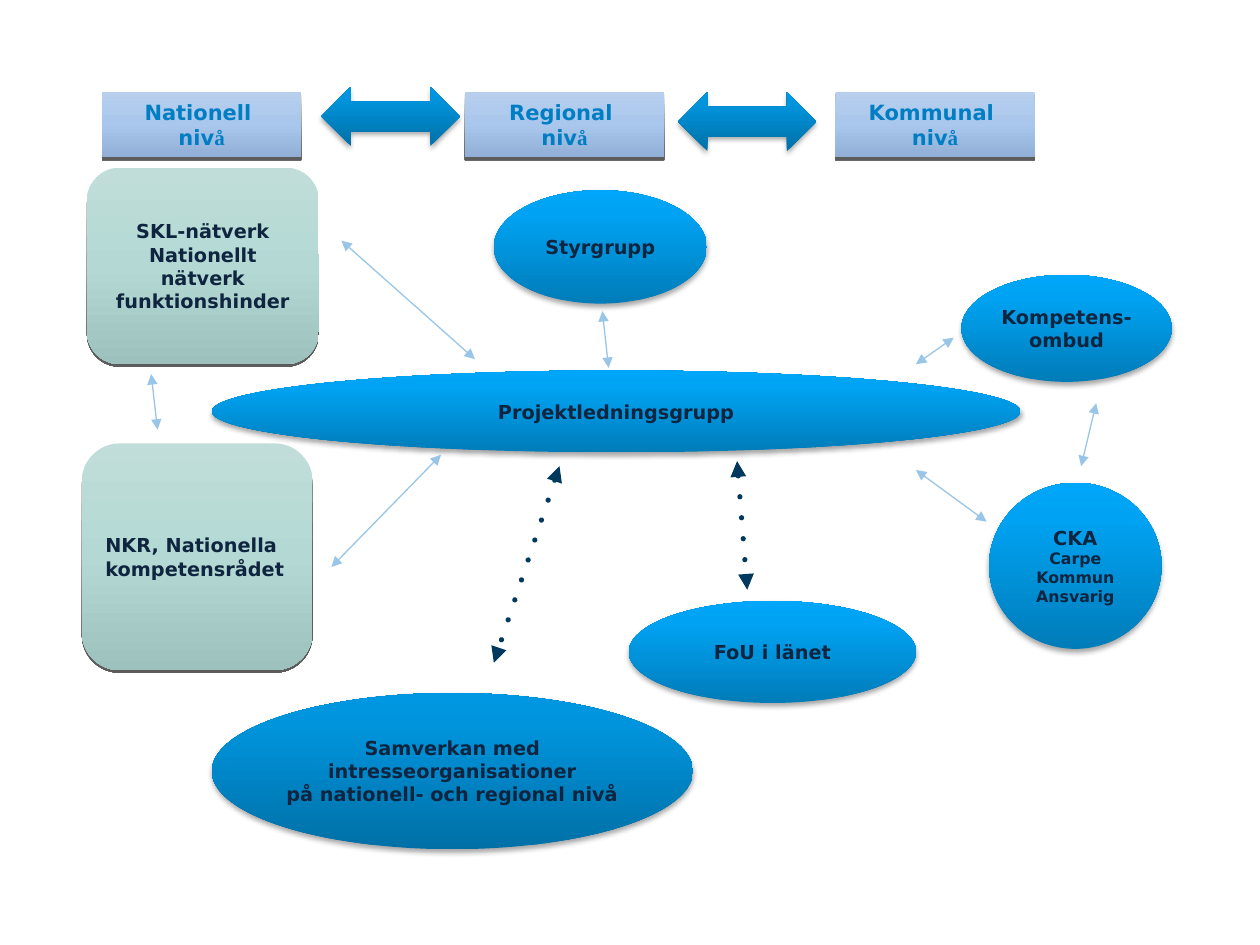
from lxml.etree import SubElement
from pptx import Presentation
from pptx.dml.color import RGBColor
from pptx.enum.shapes import MSO_CONNECTOR, MSO_SHAPE
from pptx.enum.text import MSO_ANCHOR, PP_ALIGN
from pptx.oxml.ns import qn
from pptx.util import Pt

COLORS = {
    "ink": "0F243E", "heading": "007EC4", "link": "99C6E8", "dotted": "00395D",
    "shadow": "000000",
}
# Gradient stops (position in percent, colour) and direction in degrees
GRADIENTS = {
    "blue": ([(0, "007CB9"), (80, "00A3F3"), (100, "00A6FA")], 270),
    "deep": ([(0, "0070A7"), (80, "0094DC"), (100, "0097E2")], 270),
    "green": ([(0, "C0DDD9"), (50, "B4D9D4"), (100, "9DC2BE")], 90),
    "pale": ([(0, "B7CFED"), (50, "A9C7EC"), (100, "91AFD6")], 90),
}
# Opacity in percent, blur and distance in points
SOFT, HARD = (35, 3.1, 1.8), (63, 0, 1.5)
SANS, SERIF = "DejaVu Sans", "Times New Roman"


def add_xml(parent, tag, **attributes):
    return SubElement(parent, qn(tag), {k: str(v) for k, v in attributes.items()})


def add_color(parent, color):
    return add_xml(parent, "a:srgbClr", val=color)


def write(paragraph, text, size=11, font=SANS, color="ink"):
    """Append bold text; a newline becomes a line break."""
    for i, line in enumerate(text.split("\n")):
        if i:
            paragraph.add_line_break()
        if line:
            run = paragraph.add_run()
            run.text = line
            run.font.size, run.font.name, run.font.bold = Pt(size), font, True
            run.font.color.rgb = RGBColor.from_string(COLORS[color])


def add_block(slide, kind, box, gradient, shadow, inset=0, align=PP_ALIGN.CENTER):
    """Add a gradient shape with a shadow and return its first paragraph."""
    block = slide.shapes.add_shape(kind, *(Pt(v) for v in box))
    block.line.fill.background()
    block.fill.gradient()
    properties = block.element.spPr
    fill = properties.find(qn("a:gradFill"))
    for child in list(fill):
        fill.remove(child)
    stops, angle = GRADIENTS[gradient]
    stop_list = add_xml(fill, "a:gsLst")
    for position, color in stops:
        add_color(add_xml(stop_list, "a:gs", pos=position * 1000), color)
    add_xml(fill, "a:lin", ang=angle * 60000, scaled=0)

    block.shadow.inherit = False
    opacity, blur, distance = shadow
    cast = add_xml(properties.find(qn("a:effectLst")), "a:outerShdw",
                   blurRad=int(Pt(blur)), dist=int(Pt(distance)),
                   dir=90 * 60000, rotWithShape=0)
    add_xml(add_color(cast, COLORS["shadow"]), "a:alpha", val=opacity * 1000)

    frame = block.text_frame
    frame.word_wrap = True
    frame.vertical_anchor = MSO_ANCHOR.MIDDLE
    frame.margin_left = frame.margin_right = Pt(inset)
    frame.margin_top = frame.margin_bottom = Pt(3.6)
    frame.paragraphs[0].alignment = align
    return frame.paragraphs[0]


def add_ellipse(slide, box, text, gradient="blue"):
    paragraph = add_block(slide, MSO_SHAPE.OVAL, box, gradient, SOFT)
    write(paragraph, text)
    return paragraph


def add_link(slide, origin, start, end, dotted=False):
    """Add a double-headed line between two points relative to origin."""
    points = [Pt(o + v) for point in (start, end) for o, v in zip(origin, point)]
    link = slide.shapes.add_connector(MSO_CONNECTOR.STRAIGHT, *points)
    link.line.color.rgb = RGBColor.from_string(COLORS["dotted" if dotted else "link"])
    link.line.width = Pt(3 if dotted else 0.75)
    properties = link.element.spPr
    line = properties.find(qn("a:ln"))
    if dotted:
        line.set("cap", "rnd")
        add_xml(line, "a:prstDash", val="dot")
    for end_tag in ("a:headEnd", "a:tailEnd"):
        add_xml(line, end_tag, type="triangle")
    add_xml(properties, "a:effectLst")


def add_levels(slide, box):
    left, top, width, height = box
    label_width, label_height = 113.8, 37.4
    label_top = top + height - label_height
    for offset, level in ((0, "Nationell"), (207.4, "Regional"),
                          (width - label_width, "Kommunal")):
        label = add_block(slide, MSO_SHAPE.RECTANGLE,
                          (left + offset, label_top, label_width, label_height),
                          "pale", HARD, inset=7.2)
        write(label, f"{level} \nniv", size=12, color="heading")
        write(label, "å", size=12, font=SERIF, color="heading")
    # Arrows between the levels
    for x, y in ((left + 125.3, top), (left + 329.1, label_top)):
        add_block(slide, MSO_SHAPE.LEFT_RIGHT_ARROW, (x, y, 79.2, 33.8), "deep", SOFT)


def add_national(slide, box):
    left, top, width, height = box
    network = add_block(slide, MSO_SHAPE.ROUNDED_RECTANGLE,
                        (left + 2.9, top, width - 2.9, 112.3),
                        "green", HARD, inset=7.2)
    write(network, "SKL-nätverk")
    disability = network._parent.add_paragraph()
    disability.alignment = PP_ALIGN.CENTER
    write(disability, "Nationellt nätverk funktionshinder")
    council = add_block(slide, MSO_SHAPE.ROUNDED_RECTANGLE,
                        (left, top + height - 129.6, 131.8, 129.6),
                        "green", HARD, inset=7.2, align=PP_ALIGN.LEFT)
    write(council, "NKR, Nationella kompetensrådet")
    add_link(slide, (left, top), (39.6, 118), (43.2, 149.7))


def add_regional(slide, box):
    left, top, width, height = box
    add_ellipse(slide, (left, top + 103, width, 46.8), "Projektledningsgrupp")
    add_ellipse(slide, (left, top + height - 89.3, 275, 89.3),
                "Samverkan med intresseorganisationer\npå nationell- och regional nivå",
                gradient="deep")
    add_ellipse(slide, (left + 161.2, top, 121.7, 64.8), "Styrgrupp")
    add_ellipse(slide, (left + 238.3, top + 234.7, 164.2, 58.3), "FoU i länet")
    add_link(slide, (left, top), (226.8, 101.5), (223.2, 69.1))
    add_link(slide, (left, top), (198.7, 157.7), (161.2, 270), dotted=True)
    add_link(slide, (left, top), (300.2, 154.8), (306, 228.3), dotted=True)


def add_municipal(slide, box):
    left, top, width, height = box
    add_ellipse(slide, (left, top, width, 61.2), "Kompetens-ombud")
    manager = add_ellipse(slide, (left + 15.8, top + height - 95, 98.6, 95), "CKA\n")
    write(manager, "Carpe Kommun Ansvarig", size=9)
    add_link(slide, (left, top), (68.4, 109.4), (77, 73.4))


def add_level_links(slide, box):
    for start, end in (((189.4, 324), (252, 259.9)),
                       ((195.1, 137.5), (271.4, 205.2)),
                       ((563.8, 298.1), (523.4, 268.6)),
                       ((523.4, 208.1), (545, 193))):
        add_link(slide, box[:2], start, end)


def main():
    deck = Presentation()
    deck.slide_width, deck.slide_height = Pt(720), Pt(540)
    slide = deck.slides.add_slide(deck.slide_layouts[6])
    add_levels(slide, (58.3, 49.7, 532.9, 40.3))
    add_national(slide, (46.8, 95.8, 135.4, 287.2))
    add_regional(slide, (121, 108.7, 462.2, 376.6))
    add_municipal(slide, (549.4, 157, 120.2, 213.8))
    add_level_links(slide, (0, 0, 720, 540))
    deck.save("out.pptx")


if __name__ == "__main__":
    main()
